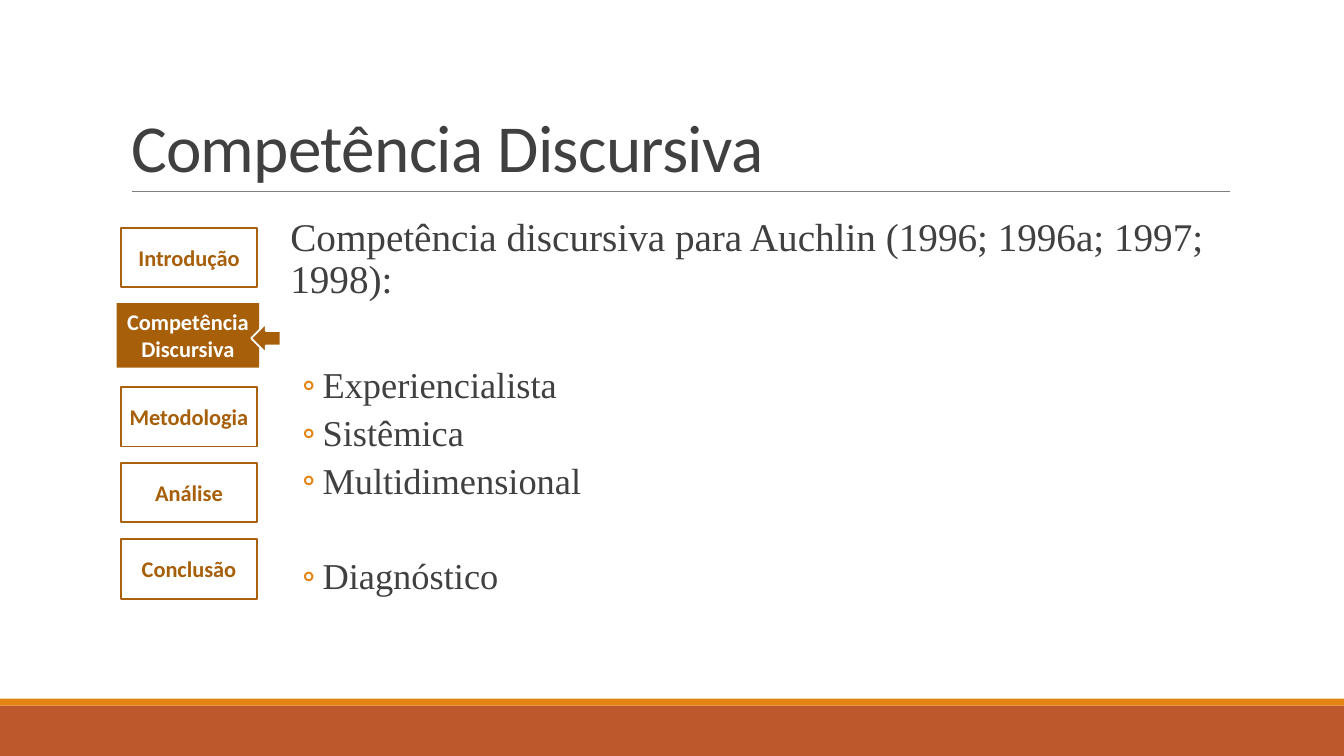
from lxml import etree
from pptx import Presentation
from pptx.dml.color import RGBColor
from pptx.enum.shapes import MSO_CONNECTOR, MSO_SHAPE
from pptx.enum.text import MSO_ANCHOR, MSO_AUTO_SIZE, PP_ALIGN
from pptx.oxml.ns import qn
from pptx.util import Pt

RECTANGLE, LEFT_ARROW = MSO_SHAPE.RECTANGLE, MSO_SHAPE.LEFT_ARROW
STRAIGHT = MSO_CONNECTOR.STRAIGHT
TOP, MIDDLE, BOTTOM = MSO_ANCHOR.TOP, MSO_ANCHOR.MIDDLE, MSO_ANCHOR.BOTTOM
LEFT, CENTER = PP_ALIGN.LEFT, PP_ALIGN.CENTER
NO_AUTOFIT = MSO_AUTO_SIZE.NONE

WIDTH, HEIGHT = 960, 540
SANS, SERIF = "Calibri", "Times New Roman"
WHITE, DARK, GRAY = "FFFFFF", "404040", "808080"
ORANGE, RUST, BROWN, OUTLINE = "E48312", "BD582C", "A75F0A", "A9610D"

# Step label and its top, relative to the first step
STEPS = [("Introdução", 0), ("Competência Discursiva", 56.9), ("Metodologia", 113.8),
         ("Análise", 167.8), ("Conclusão", 222.5)]
ACTIVE_STEP = "Competência Discursiva"
LEAD = "Competência discursiva para Auchlin (1996; 1996a; 1997; 1998):"
# Topic and the space before it
TOPICS = [("Experiencialista", 44.5), ("Sistêmica", 2), ("Multidimensional", 2),
          ("Diagnóstico", 36)]


def color(value):
    return RGBColor.from_string(value)


def add_box(slide, kind, box, fill=None, line=None, line_width=1.25):
    shape = slide.shapes.add_shape(kind, *(Pt(length) for length in box))
    shape.shadow.inherit = False
    if fill:
        shape.fill.solid()
        shape.fill.fore_color.rgb = color(fill)
    else:
        shape.fill.background()
    if line:
        shape.line.color.rgb = color(line)
        shape.line.width = Pt(line_width)
    else:
        shape.line.fill.background()
    return shape


def set_frame(shape, anchor, insets):
    frame = shape.text_frame
    frame.word_wrap = True
    frame.auto_size = NO_AUTOFIT
    frame.vertical_anchor = anchor
    frame.margin_left = frame.margin_right = Pt(insets[0])
    frame.margin_top = frame.margin_bottom = Pt(insets[1])
    return frame


def add_run(paragraph, text, size, font, text_color, bold=False):
    run = paragraph.add_run()
    run.text = text
    run.font.size = Pt(size)
    run.font.name = font
    run.font.bold = bold
    run.font.color.rgb = color(text_color)
    return run


def set_bullet(paragraph, character, margin, hanging):
    properties = paragraph._p.get_or_add_pPr()
    properties.set("marL", str(Pt(margin)))
    properties.set("indent", str(-Pt(hanging)))
    bullet_color = etree.SubElement(properties, qn("a:buClr"))
    etree.SubElement(bullet_color, qn("a:srgbClr")).set("val", ORANGE)
    etree.SubElement(properties, qn("a:buFont")).set("typeface", SANS)
    etree.SubElement(properties, qn("a:buChar")).set("char", character)


def add_footer(slide, box):
    left, top, width, height = box
    stripe = 5
    add_box(slide, RECTANGLE, (left, top + stripe, width, height - stripe), RUST)
    add_box(slide, RECTANGLE, (left, top, width, stripe), ORANGE)


def add_title(slide, box):
    left, top, width, height = box
    title = slide.shapes.title
    title.left, title.top, title.width, title.height = (Pt(length) for length in box)
    paragraph = set_frame(title, BOTTOM, (7.2, 3.6)).paragraphs[0]
    paragraph.alignment = LEFT
    paragraph.line_spacing = 0.85
    run = add_run(paragraph, "Competência Discursiva", 48, SANS, DARK)
    run.font._element.set("spc", "-50")
    # Rule under the title
    bottom = top + height
    rule = slide.shapes.add_connector(
        STRAIGHT, Pt(left + 8), Pt(bottom), Pt(left + width), Pt(bottom))
    rule.line.color.rgb = color(GRAY)
    rule.line.width = Pt(0.5)
    etree.SubElement(rule._element.spPr, qn("a:effectLst"))


def add_steps(slide, box):
    left, top, width, height = box
    for label, offset in STEPS:
        step_top = top + offset
        if label == ACTIVE_STEP:
            shape = add_box(slide, RECTANGLE,
                            (left - 3, step_top - 3, width + 4.5, height + 3.6), BROWN)
            # Marker pointing at the current step
            add_box(slide, LEFT_ARROW, (left + 93, step_top + 11.5, 21, 21), BROWN, WHITE)
        else:
            shape = add_box(slide, RECTANGLE, (left, step_top, width, height), line=OUTLINE)
        paragraph = set_frame(shape, MIDDLE, (0, 0)).paragraphs[0]
        paragraph.alignment = CENTER
        add_run(paragraph, label, 16, SANS, WHITE if label == ACTIVE_STEP else BROWN, True)


def add_body(slide, box):
    frame = set_frame(add_box(slide, RECTANGLE, box, line=WHITE, line_width=0.75),
                      TOP, (0, 3.6))
    # Lead sentence, then the bulleted topics
    rows = [(LEAD, 28, 12, 2, " ", 7.2, 7.2)]
    rows += [(topic, 26, before, 4, "◦", 30.2, 14.4) for topic, before in TOPICS]
    for index, (text, size, before, after, bullet, margin, hanging) in enumerate(rows):
        paragraph = frame.add_paragraph() if index else frame.paragraphs[0]
        paragraph.alignment = LEFT
        paragraph.level = min(index, 1)
        paragraph.line_spacing = 0.9
        paragraph.space_before, paragraph.space_after = Pt(before), Pt(after)
        set_bullet(paragraph, bullet, margin, hanging)
        add_run(paragraph, text, size, SERIF, DARK)


def main():
    presentation = Presentation()
    presentation.slide_width, presentation.slide_height = Pt(WIDTH), Pt(HEIGHT)
    slide = presentation.slides.add_slide(presentation.slide_layouts[5])
    add_footer(slide, (0, 499, WIDTH, 41))
    add_title(slide, (86.4, 22.4, 792, 114.4))
    add_body(slide, (200.2, 152, 676, 334))
    add_steps(slide, (86.4, 162.7, 97.2, 42.5))
    presentation.save("out.pptx")


if __name__ == "__main__":
    main()
